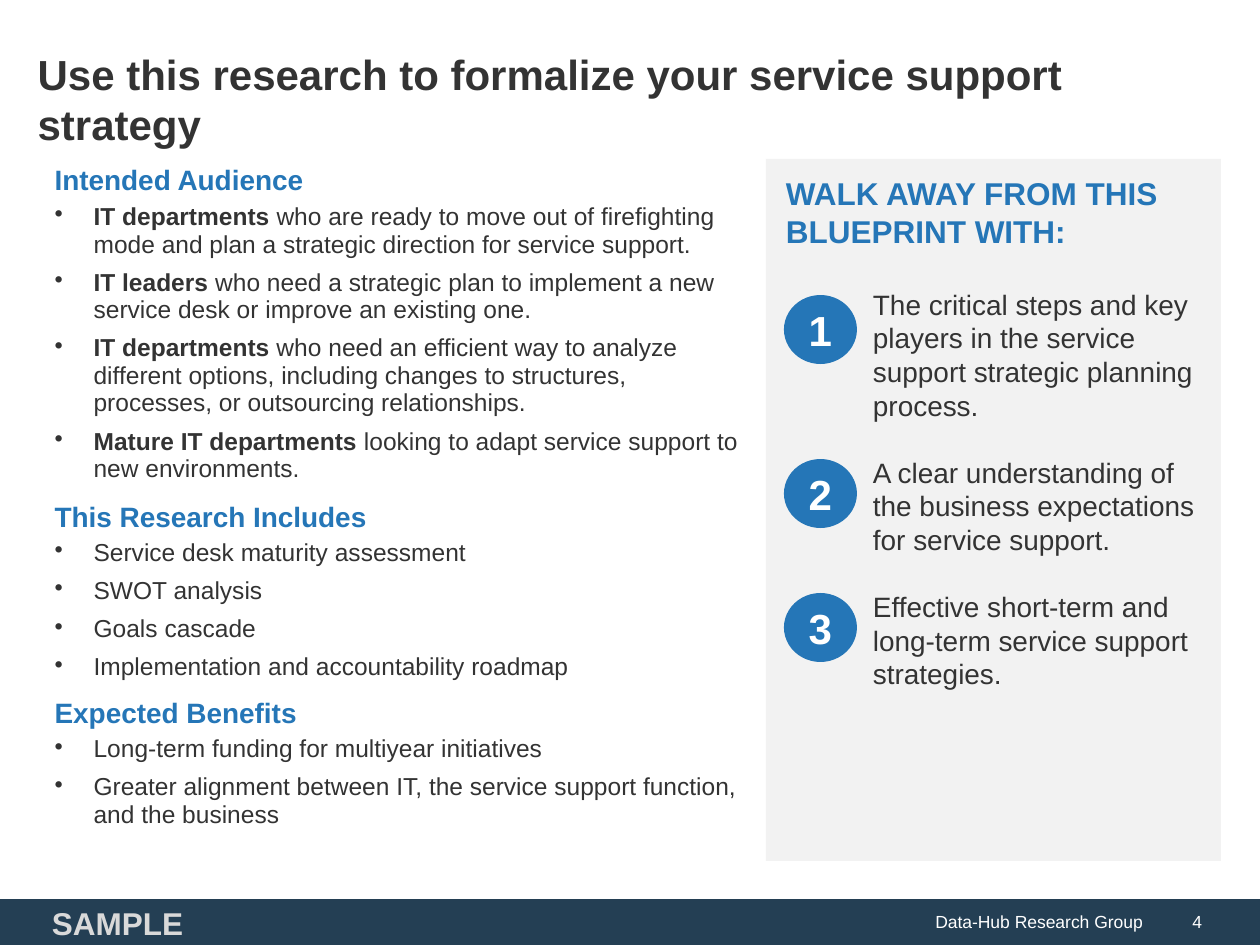
from lxml import etree
from pptx import Presentation
from pptx.dml.color import RGBColor
from pptx.enum.shapes import MSO_SHAPE as SHAPE
from pptx.enum.text import MSO_ANCHOR as ANCHOR, MSO_AUTO_SIZE as AUTO, PP_ALIGN as ALIGN
from pptx.oxml.ns import qn
from pptx.util import Emu, Pt

NAVY = RGBColor(0x24, 0x3F, 0x54)
BLUE = RGBColor(0x25, 0x76, 0xB7)
DARK = RGBColor(0x33, 0x33, 0x33)
PALE = RGBColor(0xF2, 0xF2, 0xF2)
SILVER = RGBColor(0xD9, 0xD9, 0xD9)
WHITE = RGBColor(0xFF, 0xFF, 0xFF)

SECTIONS = [
    ("Intended Audience", 292, [
        ("IT departments ", "who are ready to move out of firefighting mode and plan "
         "a strategic direction for service support."),
        ("IT leaders", " who need a strategic plan to implement a new service desk "
         "or improve an existing one."),
        ("IT departments", " who need an efficient way to analyze different options, "
         "including changes to structures, processes, or outsourcing relationships."),
        ("Mature IT departments", " looking to adapt service support to new environments."),
    ]),
    ("This Research Includes", 152, [
        ("", "Service desk maturity assessment"),
        ("", "SWOT analysis"),
        ("", "Goals cascade"),
        ("", "Implementation and accountability roadmap"),
    ]),
    ("Expected Benefits", 105, [
        ("", "Long-term funding for multiyear initiatives"),
        ("", "Greater alignment between IT, the service support function, and the business"),
    ]),
]
TAKEAWAYS = [
    (295, "The critical steps and key players in the service support strategic planning process."),
    (459, "A clear understanding of the business expectations for service support."),
    (593, "Effective short-term and long-term service support strategies."),
]


def px(n):
    return Emu(round(n * 914400 / 126))


class Deck:
    font = "Arial"
    header_row = 44

    def __init__(self):
        self.prs = Presentation()
        self.prs.slide_width, self.prs.slide_height = px(1260), px(945)
        self.s = self.prs.slides.add_slide(self.prs.slide_layouts[5])

    def run(self, p, text, size, color, bold=False):
        r = p.add_run()
        r.text = text
        r.font.name, r.font.size, r.font.bold = self.font, Pt(size), bold
        r.font.color.rgb = color

    def para(self, tf, runs, size, color, align=ALIGN.LEFT, left=0, hang=0, leading=1.2):
        """Add a paragraph of (text, bold) runs; leading is a multiple of the size."""
        p = tf.paragraphs[0]
        if p.runs:
            p = tf.add_paragraph()
        p.alignment, p.line_spacing = align, Pt(round(size * leading, 2))
        p.space_before = p.space_after = Pt(0)
        pPr = p._p.get_or_add_pPr()
        pPr.set("marL", str(px(left)))
        pPr.set("indent", str(-px(hang)))
        for text, bold in runs:
            if text:
                self.run(p, text, size, color, bold)
        return p

    def bullet(self, tf, lead, rest):
        p = self.para(tf, [(lead, True), (rest, False)], 14, DARK,
                      left=39, hang=39, leading=1.125)
        p.space_before = p.space_after = Pt(3)
        etree.SubElement(p._p.pPr, qn("a:buChar")).set("char", "•")

    def frame(self, sp, anchor=ANCHOR.MIDDLE):
        tf = sp.text_frame
        tf.word_wrap, tf.auto_size, tf.vertical_anchor = True, AUTO.NONE, anchor
        return tf

    def title(self, text, *box):
        sp = self.s.shapes.title
        sp.left, sp.top, sp.width, sp.height = map(px, box)
        self.para(self.frame(sp), [(text, True)], 24, DARK, left=25)

    def shape(self, kind, fill, *box, parent=None):
        sp = (parent or self.s).shapes.add_shape(kind, *map(px, box))
        sp.shadow.inherit = False
        sp.fill.solid()
        sp.fill.fore_color.rgb = fill
        sp.line.fill.background()
        return sp

    def footer(self, text, x, width, left, align):
        sp = self.shape(SHAPE.RECTANGLE, NAVY, x, 899, width, 46)
        self.para(self.frame(sp), [(text, False)], 10, WHITE, align, left)

    def label(self, text, *box):
        tf = self.frame(self.s.shapes.add_textbox(*map(px, box)))
        self.para(tf, [(text, True)], 18, SILVER, ALIGN.CENTER)

    def sections(self, sections, x, y, width):
        """Table of alternating heading and bullet-list rows."""
        heights = [h for _, body, _ in sections for h in (self.header_row, body)]
        table = self.s.shapes.add_table(len(heights), 1, px(x), px(y), px(width),
                                        px(sum(heights))).table
        table.first_row = table.horz_banding = False
        for i, height in enumerate(heights):
            table.rows[i].height = px(height)
            cell = table.cell(i, 0)
            cell.fill.background()
            heading, _, items = sections[i // 2]
            if i % 2 == 0:
                self.para(cell.text_frame, [(heading, True)], 16, BLUE, leading=1.125)
                continue
            cell.margin_top = cell.margin_bottom = 0
            for lead, rest in items:
                self.bullet(cell.text_frame, lead, rest)

    def panel(self, heading, takeaways, *box):
        group = self.s.shapes.add_group_shape()
        sp = self.shape(SHAPE.RECTANGLE, PALE, *box, parent=group)
        tf = self.frame(sp, ANCHOR.TOP)
        tf.margin_left, tf.margin_top, tf.margin_right = px(20), px(15), px(15)
        self.para(tf, [(heading, True)], 18, BLUE).space_after = Pt(21.6)
        for number, (y, text) in enumerate(takeaways, 1):
            p = self.para(tf, [(text, False)], 16, DARK, left=87)
            if number < len(takeaways):
                p.space_after = Pt(19.2)
            badge = self.shape(SHAPE.OVAL, BLUE, 784, y, 73, 69, parent=group)
            self.para(self.frame(badge), [(str(number), True)], 24, WHITE, ALIGN.CENTER)


def main():
    d = Deck()
    d.footer("Data-Hub Research Group", 0, 1155, 37, ALIGN.RIGHT)
    d.footer("4", 1155, 105, 25, ALIGN.LEFT)
    d.title("Use this research to formalize your service support strategy", 0, 38, 1188, 121)
    d.sections(SECTIONS, 42, 159, 711)
    d.panel("WALK AWAY FROM THIS BLUEPRINT WITH:", TAKEAWAYS, 766, 159, 455, 702)
    d.label("SAMPLE", 33, 908, 169, 30)
    d.prs.save("out.pptx")


if __name__ == "__main__":
    main()
